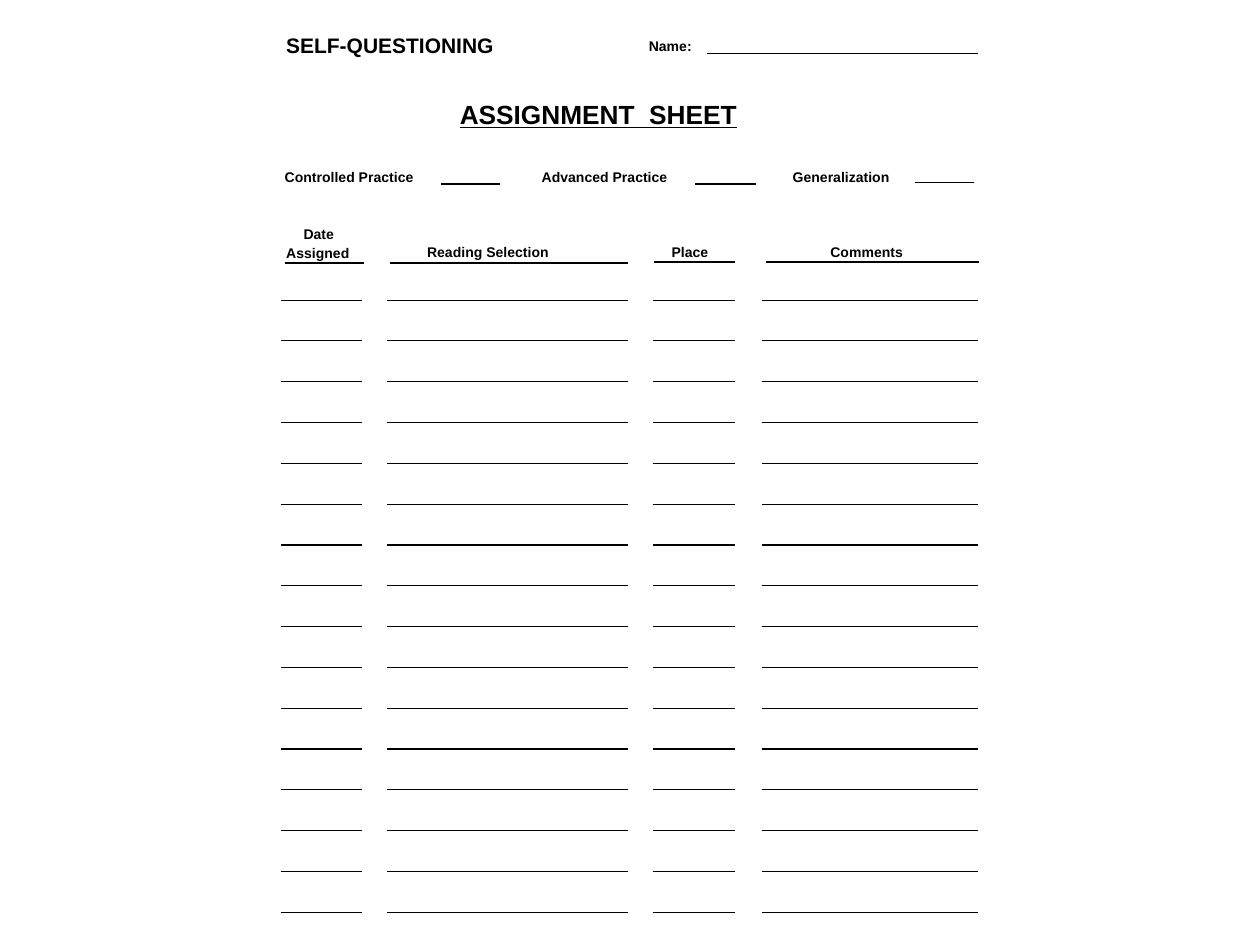
import pptx
import pptx.util
import pptx.dml.color
import pptx.enum.shapes
import pptx.enum.text
import pptx.oxml.ns
import lxml.etree
from pptx.util import Cm

BLACK = pptx.dml.color.RGBColor(0, 0, 0)
FONT = "Arial"
THIN, THICK = 0.63, 1.13
LABEL_SIZE, LABEL_HEIGHT = 8, 0.38
ROWS = 16

# Offsets in cm from the left of the region: label, its left, its width, blank from, blank to, blank y
PRACTICES = [
    ("Controlled Practice", 0.08, 3.1, 3.23, 4.42, 0.31),
    ("Advanced Practice", 5.26, 3.02, 8.36, 9.58, 0.31),
    ("Generalization", 10.32, 2.34, 12.78, 13.97, 0.28),
]
# Heading lines (text, left, top, width), then heading rule (from, to, y)
HEADINGS = [
    ([("Date", 0.46, 0, 0.84), ("Assigned", 0.11, 0.38, 1.52)], (0.08, 1.68, 0.76)),
    ([("Reading Selection", 2.95, 0.35, 2.92)], (2.21, 6.99, 0.76)),
    ([("Place", 7.88, 0.35, 0.89)], (7.52, 9.15, 0.73)),
    ([("Comments", 11.08, 0.35, 1.75)], (9.78, 14.08, 0.73)),
]
ENTRY_COLUMNS = [(0, 1.63), (2.14, 6.99), (7.5, 9.15), (9.71, 14.05)]


def add_label(slide, text, left, top, width, height=LABEL_HEIGHT,
              size=LABEL_SIZE, underline=None):
    label = slide.shapes.add_textbox(Cm(left), Cm(top), Cm(width), Cm(height))
    frame = label.text_frame
    frame.margin_left = frame.margin_right = frame.margin_top = frame.margin_bottom = 0
    frame.word_wrap = False
    frame.auto_size = pptx.enum.text.MSO_AUTO_SIZE.SHAPE_TO_FIT_TEXT
    paragraph = frame.paragraphs[0]
    paragraph.text = text
    font = paragraph.font
    font.name = FONT
    font.size = pptx.util.Pt(size)
    font.bold = True
    font.underline = underline
    font.color.rgb = BLACK


def add_rule(slide, start, end, y, weight=THIN):
    rule = slide.shapes.add_connector(
        pptx.enum.shapes.MSO_CONNECTOR.STRAIGHT, Cm(start), Cm(y), Cm(end), Cm(y))
    rule.line.color.rgb = BLACK
    rule.line.width = pptx.util.Pt(weight)
    lxml.etree.SubElement(rule._element.spPr, pptx.oxml.ns.qn("a:effectLst"))


def add_header(slide, left, top):
    add_label(slide, "SELF-QUESTIONING", left + 0.11, top, 5, 0.58, size=12)
    add_label(slide, "Name:", left + 7.42, top + 0.1, 1.04)
    add_rule(slide, left + 8.59, left + 14.05, top + 0.41)
    add_label(slide, "ASSIGNMENT  SHEET", left + 3.61, top + 1.32, 6.68, 0.71,
              size=15, underline=True)


def add_practice_types(slide, left, top):
    for name, offset, width, start, end, y in PRACTICES:
        add_label(slide, name, left + offset, top, width)
        add_rule(slide, left + start, left + end, top + y)


def add_headings(slide, left, top):
    for lines, (start, end, y) in HEADINGS:
        for text, x, dy, width in lines:
            add_label(slide, text, left + x, top + dy, width)
        add_rule(slide, left + start, left + end, top + y, THICK)


def add_entry_rows(slide, left, top, height):
    pitch = height / (ROWS - 1)
    for row in range(ROWS):
        for start, end in ENTRY_COLUMNS:
            add_rule(slide, left + start, left + end, top + row * pitch)


def main():
    deck = pptx.Presentation()
    deck.slide_width, deck.slide_height = Cm(25.4), Cm(19.05)
    slide = deck.slides.add_slide(deck.slide_layouts[6])
    sheet_left = 5.66

    # Sheet name, student name and title
    add_header(slide, sheet_left, 0.66)
    # Kinds of practice to tick
    add_practice_types(slide, sheet_left, 3.4)
    # Assignment log
    add_headings(slide, sheet_left, 4.55)
    add_entry_rows(slide, sheet_left, 6.05, 12.34)

    deck.save("out.pptx")


if __name__ == "__main__":
    main()
